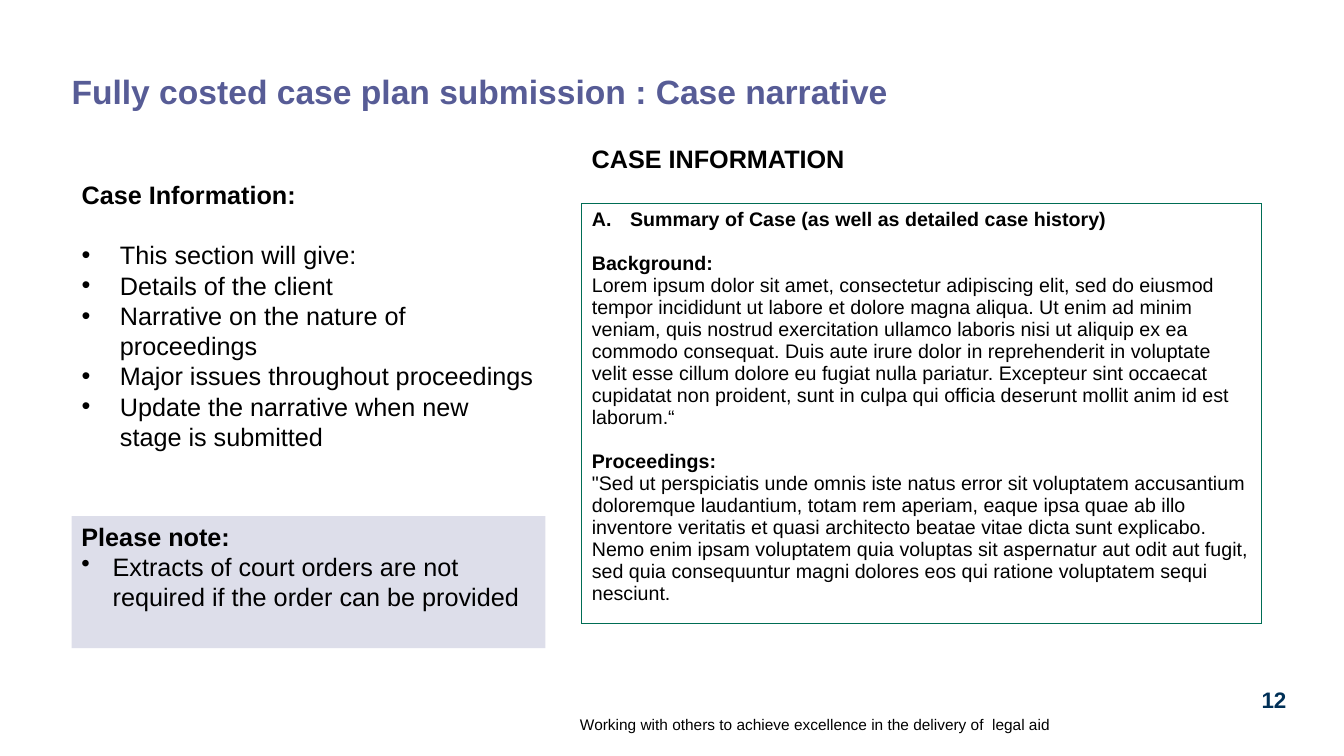
from lxml import etree
from pptx import Presentation
from pptx.dml.color import RGBColor
from pptx.enum.shapes import MSO_SHAPE
from pptx.enum.text import MSO_ANCHOR as Anchor, MSO_AUTO_SIZE as AutoSize, PP_ALIGN as Align
from pptx.oxml.ns import qn
from pptx.util import Inches, Pt

BLACK = "000000"
PURPLE = "575C96"
LILAC = "DDDEEA"
NAVY = "003057"
GREEN = "006D55"
LEFT_COLUMN, LEFT_WIDTH = 0.71, 4.7
RIGHT_COLUMN = 5.77

SECTION_POINTS = [
    "This section will give:",
    "Details of the client",
    "Narrative on the nature of proceedings",
    "Major issues throughout proceedings",
    "Update the narrative when new stage is submitted",
]
BACKGROUND = (
    "Lorem ipsum dolor sit amet, consectetur adipiscing elit, sed do eiusmod tempor "
    "incididunt ut labore et dolore magna aliqua. Ut enim ad minim veniam, quis nostrud "
    "exercitation ullamco laboris nisi ut aliquip ex ea commodo consequat. Duis aute irure "
    "dolor in reprehenderit in voluptate velit esse cillum dolore eu fugiat nulla pariatur. "
    "Excepteur sint occaecat cupidatat non proident, sunt in culpa qui officia deserunt "
    "mollit anim id est laborum.“"
)
PROCEEDINGS = (
    '"Sed ut perspiciatis unde omnis iste natus error sit voluptatem accusantium '
    "doloremque laudantium, totam rem aperiam, eaque ipsa quae ab illo inventore veritatis "
    "et quasi architecto beatae vitae dicta sunt explicabo. Nemo enim ipsam voluptatem quia "
    "voluptas sit aspernatur aut odit aut fugit, sed quia consequuntur magni dolores eos "
    'qui ratione voluptatem sequi nesciunt."'
).rstrip('"')


def rgb(color):
    return RGBColor.from_string(color)


def write(frame, text, size=18, color=BLACK, bold=False, align=Align.LEFT,
          before=0, spacing=1.0, bullet=None, indent=0):
    """Fill the frame's empty first paragraph, or append one; bullet is (tag, attribute, value)."""
    paragraph = frame.paragraphs[0]
    if paragraph.runs:
        paragraph = frame.add_paragraph()
    properties = paragraph._p.get_or_add_pPr()
    properties.set("marL", str(Inches(indent)))
    properties.set("indent", str(-Inches(indent)))
    tag, attribute, value = bullet or ("a:buNone", None, None)
    marker = etree.SubElement(properties, qn(tag))
    if attribute:
        marker.set(attribute, value)
    paragraph.alignment = align
    paragraph.space_before = Pt(before)
    paragraph.line_spacing = spacing
    run = paragraph.add_run()
    run.text = text
    font = run.font
    font.name, font.size, font.bold = "Arial", Pt(size), bold
    font.color.rgb = rgb(color)


DOT = ("a:buChar", "char", "•")
LETTER = ("a:buAutoNum", "type", "alphaUcPeriod")


def prepare(shape, anchor=Anchor.TOP, margins=(0.1, 0.05)):
    frame = shape.text_frame
    frame.word_wrap = True
    frame.auto_size = AutoSize.NONE
    frame.vertical_anchor = anchor
    frame.margin_left = frame.margin_right = Inches(margins[0])
    frame.margin_top = frame.margin_bottom = Inches(margins[1])
    return frame


def place(shape, box):
    shape.left, shape.top, shape.width, shape.height = map(Inches, box)


def add_text(slide, box, text, anchor=Anchor.TOP, margins=(0, 0), **style):
    frame = prepare(slide.shapes.add_textbox(*map(Inches, box)), anchor, margins)
    write(frame, text, **style)


def fill_title(slide, box):
    title = slide.shapes.title
    place(title, box)
    write(prepare(title, Anchor.MIDDLE, (0, 0)),
          "Fully costed case plan submission : Case narrative",
          size=24, color=PURPLE, bold=True, spacing=0.9)


def fill_section_list(slide, box):
    body = slide.placeholders[1]
    place(body, box)
    frame = prepare(body)
    write(frame, "Case Information:", bold=True)
    for index, point in enumerate(SECTION_POINTS):
        write(frame, point, before=0 if index else 21.5, bullet=DOT, indent=0.38)


def add_note(slide, box):
    note = slide.shapes.add_shape(MSO_SHAPE.RECTANGLE, *map(Inches, box))
    note.shadow.inherit = False
    note.fill.solid()
    note.fill.fore_color.rgb = rgb(LILAC)
    note.line.fill.background()
    frame = prepare(note)
    write(frame, "Please note:", bold=True)
    write(frame, "Extracts of court orders are not required if the order can be provided",
          bullet=DOT, indent=0.31)


def add_borders(cell, color, width):
    properties = cell._tc.get_or_add_tcPr()
    for position, side in enumerate(("lnL", "lnR", "lnT", "lnB")):
        line = etree.Element(qn(f"a:{side}"), w=str(Pt(width)))
        fill = etree.SubElement(line, qn("a:solidFill"))
        etree.SubElement(fill, qn("a:srgbClr"), val=color)
        properties.insert(position, line)


def add_case_table(slide, box):
    table = slide.shapes.add_table(1, 1, *map(Inches, box)).table
    table.first_row = table.horz_banding = False
    cell = table.cell(0, 0)
    cell.fill.background()
    add_borders(cell, GREEN, 0.5)
    frame = cell.text_frame
    write(frame, "Summary of Case (as well as detailed case history)",
          size=14, bold=True, bullet=LETTER, indent=0.38)
    for heading, passage in (("Background:", BACKGROUND), ("Proceedings:", PROCEEDINGS)):
        write(frame, heading, size=14, bold=True, before=15.7)
        write(frame, passage, size=14)


def add_case_information(slide, left, top):
    add_text(slide, (left, top, 3.17, 0.4), "CASE INFORMATION", margins=(0.1, 0.05), bold=True)
    add_case_table(slide, (left, top + 0.65, 6.74, 4.16))


def add_footer(slide):
    add_text(slide, (12.44, 6.81, 0.39, 0.28), "12",
             size=16, color=NAVY, bold=True, align=Align.CENTER)
    add_text(slide, (0.57, 6.92, 9.85, 0.36),
             "Working with others to achieve excellence in the delivery of  legal aid",
             anchor=Anchor.BOTTOM, size=11, align=Align.RIGHT)


def main():
    presentation = Presentation()
    presentation.slide_width, presentation.slide_height = Inches(13.33), Inches(7.5)
    slide = presentation.slides.add_slide(presentation.slide_layouts[1])
    fill_title(slide, (LEFT_COLUMN, 0.74, 12.04, 0.38))
    fill_section_list(slide, (LEFT_COLUMN, 1.73, LEFT_WIDTH, 3.13))
    add_note(slide, (LEFT_COLUMN, 5.12, LEFT_WIDTH, 1.31))
    add_case_information(slide, RIGHT_COLUMN, 1.37)
    add_footer(slide)
    presentation.save("out.pptx")


if __name__ == "__main__":
    main()
